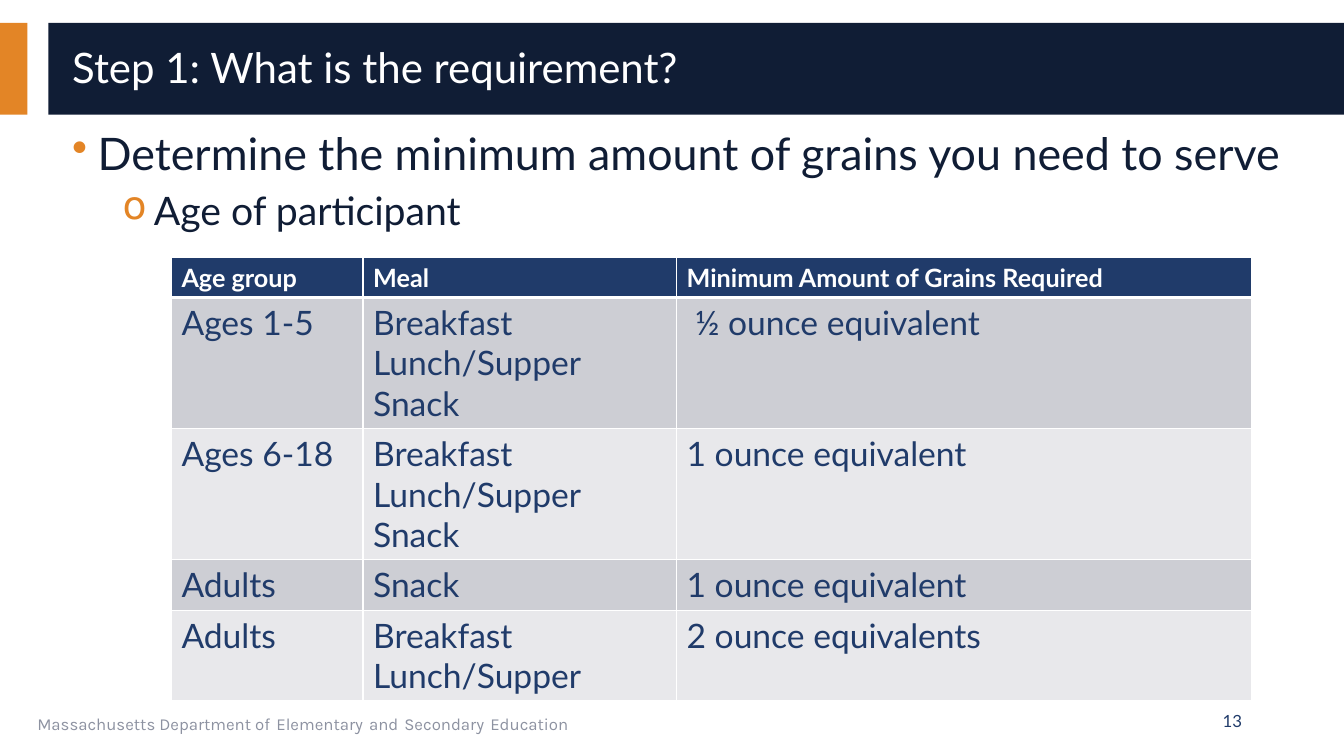
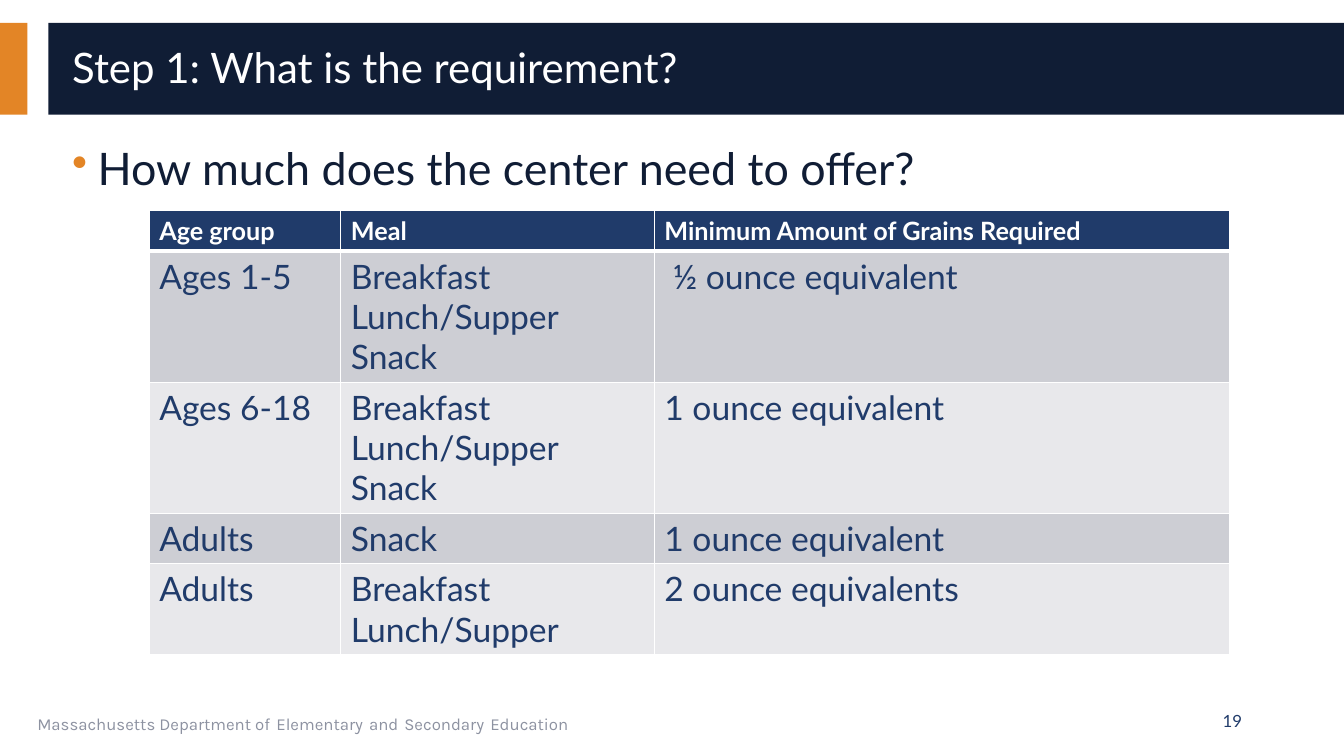
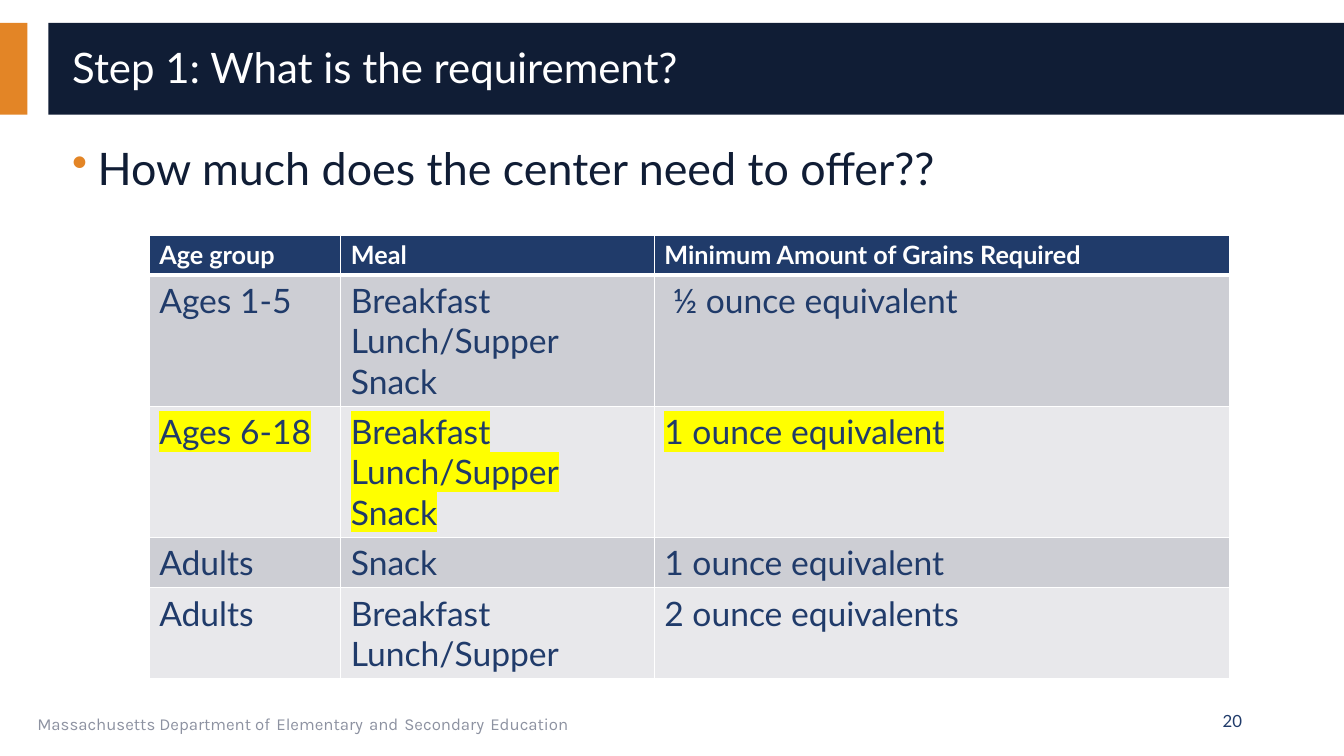
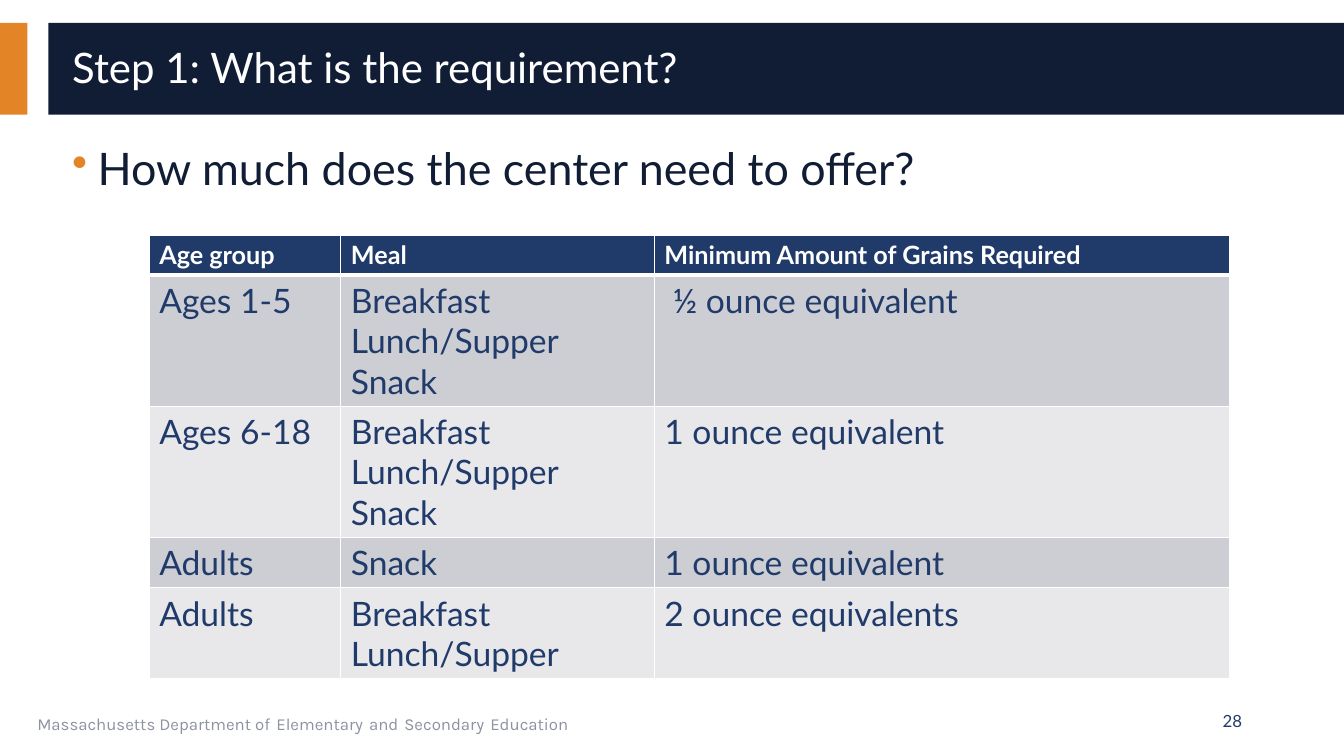
from dataclasses import dataclass

from lxml.etree import SubElement
from pptx import Presentation
from pptx.dml.color import RGBColor
from pptx.enum.shapes import MSO_SHAPE
from pptx.enum.text import MSO_ANCHOR, PP_ALIGN
from pptx.oxml.ns import qn
from pptx.util import Cm, Pt


@dataclass(frozen=True)
class Theme:
    # Colours
    navy: str = "101D35"
    blue: str = "203B6A"
    orange: str = "E38526"
    grey: str = "8D92A1"
    white: str = "FFFFFF"
    mark: str = "FFFF00"
    bands: tuple = ("CDCED4", "E8E8EB")
    # Fonts and type sizes
    font: str = "Lato"
    foot: str = "Karla"
    title: int = 30
    levels: tuple = (32, 28)
    head: int = 18
    cell: int = 24
    small: int = 12
    gap: int = 18


TITLE = "Step 1: What is the requirement?"
FOOTER = ("Massachusetts Department of", "Elementary", "and", "Secondary", "Education")
HEAD = ("Age group", "Meal", "Minimum Amount of Grains Required")
MEALS = ("Breakfast", "Lunch/Supper", "Snack")
ROWS = (
    (("Ages 1-5",), MEALS, (" ½ ounce equivalent",)),
    (("Ages 6-18",), MEALS, ("1 ounce equivalent",)),
    (("Adults",), MEALS[2:], ("1 ounce equivalent",)),
    (("Adults",), MEALS[:2], ("2 ounce equivalents",)),
)
COLS = (4.83, 7.9, 14.5)
HEIGHTS = (1, 3.3, 3.3, 1.27, 2.29)
INDENTS = ((0.64, "•"), (2.06, "o"))
HANGS = (0.64, 0.79)
ASK = "How much does the center need to offer?"


def solid(node, color):
    fill = SubElement(node, qn("a:solidFill"))
    SubElement(fill, qn("a:srgbClr"), val=color)


class Deck:
    def __init__(self, theme):
        self.theme = theme
        self.file = Presentation()
        self.file.slide_width, self.file.slide_height = Cm(33.87), Cm(19.05)
        self.slide = None

    # Basic elements
    def bar(self, left, width, color):
        shape = self.slide.shapes.add_shape(
            MSO_SHAPE.RECTANGLE, Cm(left), Cm(0.58), Cm(width), Cm(2.31))
        shape.shadow.inherit = False
        shape.fill.solid()
        shape.fill.fore_color.rgb = RGBColor.from_string(color)
        shape.line.fill.background()

    def box(self, left, top, width, height, anchor=MSO_ANCHOR.TOP):
        shape = self.slide.shapes.add_textbox(
            Cm(left), Cm(top), Cm(width), Cm(height))
        frame = shape.text_frame
        frame.word_wrap = True
        frame.vertical_anchor = anchor
        return frame

    def para(self, frame, index):
        return frame.add_paragraph() if index else frame.paragraphs[0]

    def run(self, para, text, size, color, font=None, bold=False, mark=False):
        run = para.add_run()
        run.text = text
        run.font.size = Pt(size)
        run.font.bold = bold
        run.font.color.rgb = RGBColor.from_string(color)
        if mark:
            props = run.font._element
            light = SubElement(props, qn("a:highlight"))
            SubElement(light, qn("a:srgbClr"), val=self.theme.mark)
        run.font.name = font or self.theme.font

    # Shared frame of every slide
    def page(self, title, number):
        t = self.theme
        self.slide = self.file.slides.add_slide(self.file.slide_layouts[6])
        self.bar(0, 0.69, t.orange)
        self.bar(1.22, 32.65, t.navy)
        foot = self.box(0.69, 17.65, 21.44, 1.02).paragraphs[0]
        for i, word in enumerate(FOOTER):
            if i:
                self.run(foot, " ", t.gap, t.blue, t.foot)
            self.run(foot, word, t.small, t.grey, t.foot)
        head = self.box(1.57, 0.81, 31.6, 1.88, MSO_ANCHOR.MIDDLE).paragraphs[0]
        head.line_spacing = 0.9
        self.run(head, title, t.title, t.white)
        page = self.box(23.93, 17.65, 7.62, 1.02, MSO_ANCHOR.MIDDLE).paragraphs[0]
        page.alignment = PP_ALIGN.RIGHT
        self.run(page, str(number), t.small, t.blue)

    # Bulleted text, one level deeper per line
    def bullets(self, top, height, lines):
        frame = self.box(1.57, top, 31.6, height)
        for level, text in enumerate(lines):
            para = self.para(frame, level)
            left, sign = INDENTS[level]
            props = para._p.get_or_add_pPr()
            props.set("marL", str(Cm(left)))
            props.set("indent", str(-Cm(HANGS[level])))
            tint = SubElement(props, qn("a:buClr"))
            SubElement(tint, qn("a:srgbClr"), val=self.theme.orange)
            SubElement(props, qn("a:buChar"), char=sign)
            if level:
                para.level = level
                para.space_before = Pt(5)
            self.run(para, text, self.theme.levels[level], self.theme.navy)

    # Table of grain amounts
    def cell(self, cell, lines, fill, row, **style):
        props = cell._tc.get_or_add_tcPr()
        for side in "LRTB":
            thick = (row, side) in ((0, "B"), (1, "T"))
            line = SubElement(props, qn("a:ln" + side), w=str(Pt(3 if thick else 1)))
            solid(line, self.theme.white)
        cell.fill.solid()
        cell.fill.fore_color.rgb = RGBColor.from_string(fill)
        for i, text in enumerate(lines):
            self.run(self.para(cell.text_frame, i), text, **style)

    def table(self, left, top, mark=None):
        t = self.theme
        grid = self.slide.shapes.add_table(
            len(HEIGHTS), len(COLS), Cm(left), Cm(top),
            Cm(sum(COLS)), Cm(sum(HEIGHTS))).table
        grid.first_row = grid.horz_banding = False
        for col, width in zip(grid.columns, COLS):
            col.width = Cm(width)
        for row, height in zip(grid.rows, HEIGHTS):
            row.height = Cm(height)
        for c, text in enumerate(HEAD):
            self.cell(grid.cell(0, c), (text,), t.blue, 0,
                      size=t.head, color=t.white, bold=True)
        for r, row in enumerate(ROWS, 1):
            for c, lines in enumerate(row):
                self.cell(grid.cell(r, c), lines, t.bands[(r - 1) % 2], r,
                          size=t.cell, color=t.blue, mark=r == mark)


def main():
    deck = Deck(Theme())

    # Requirement by age
    deck.page(TITLE, 13)
    deck.bullets(3.05, 14.02, (
        "Determine the minimum amount of grains you need to serve",
        "Age of participant"))
    deck.table(4.32, 6.48)

    # Question, marked answer, question again
    for number, text, top, mark in (
            (19, ASK, 5.31, None), (20, ASK + "?", 5.92, 2), (28, ASK, 5.92, None)):
        deck.page(TITLE, number)
        deck.bullets(3.43, 1.88, (text,))
        deck.table(3.76, top, mark)

    deck.file.save("out.pptx")


if __name__ == "__main__":
    main()
